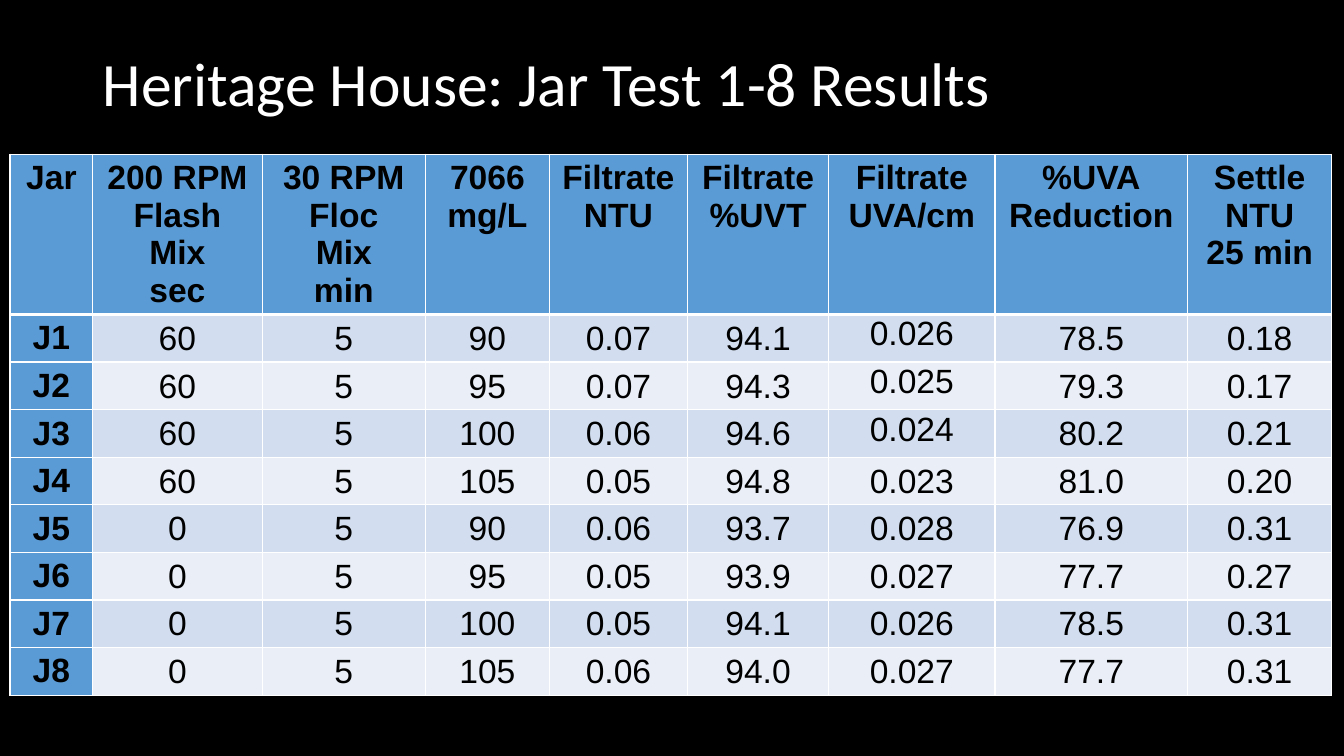
"""Build the jar test results slide."""
from lxml import etree
from pptx import Presentation, util as u
from pptx.dml.color import RGBColor
from pptx.enum import text
from pptx.oxml.ns import qn

TITLE = "Heritage House: Jar Test 1-8 Results"
COLUMNS = [
    ("Jar", 0.82), ("200 RPM\nFlash\nMix\nsec", 1.68),
    ("30 RPM\nFloc\nMix\nmin", 1.62), ("7066\nmg/L", 1.23),
    ("Filtrate\nNTU", 1.37), ("Filtrate\n%UVT", 1.4),
    ("Filtrate\nUVA/cm", 1.65), ("%UVA\nReduction", 1.91),
    ("Settle\nNTU\n25 min", 1.43),
]
JARS = [
    ("J1", "60", "5", "90", "0.07", "94.1", "0.026", "78.5", "0.18"),
    ("J2", "60", "5", "95", "0.07", "94.3", "0.025", "79.3", "0.17"),
    ("J3", "60", "5", "100", "0.06", "94.6", "0.024", "80.2", "0.21"),
    ("J4", "60", "5", "105", "0.05", "94.8", "0.023", "81.0", "0.20"),
    ("J5", "0", "5", "90", "0.06", "93.7", "0.028", "76.9", "0.31"),
    ("J6", "0", "5", "95", "0.05", "93.9", "0.027", "77.7", "0.27"),
    ("J7", "0", "5", "100", "0.05", "94.1", "0.026", "78.5", "0.31"),
    ("J8", "0", "5", "105", "0.06", "94.0", "0.027", "77.7", "0.31"),
]
HEADING_HEIGHT, JAR_HEIGHT = 1.59, 0.47
UVA_COLUMN, TOP_UVA_ROWS = 6, (1, 2, 3)
BLACK, WHITE, BLUE = "000000", "FFFFFF", "5B9BD5"
BANDS = ("EAEFF7", "D2DEEF")


def color(value):
    return RGBColor.from_string(value)


def style_text(frame, font_name, size, hue, bold, align):
    for paragraph in frame.paragraphs:
        paragraph.alignment = align
        for run in paragraph.runs:
            run.font.name = font_name
            run.font.size = u.Pt(size)
            run.font.color.rgb = color(hue)
            run.font.bold = bold


def draw_borders(cell, widths):
    properties = cell._tc.get_or_add_tcPr()
    for side, width in widths.items():
        line = etree.SubElement(properties, qn(f"a:ln{side}"), w=str(u.Pt(width)))
        fill = etree.SubElement(line, qn("a:solidFill"))
        etree.SubElement(fill, qn("a:srgbClr"), val=WHITE)


def fill_cell(cell, row, column, wording):
    heading = row == 0 or column == 0
    draw_borders(cell, {"L": 1, "R": 1, "T": 3 if row == 1 else 1,
                        "B": 3 if row == 0 else 1})
    cell.fill.solid()
    cell.fill.fore_color.rgb = color(BLUE if heading else BANDS[row % 2])
    cell.text_frame.text = wording
    style_text(cell.text_frame, "Arial", 24, BLACK, heading, text.PP_ALIGN.CENTER)
    raised = column == UVA_COLUMN and row in TOP_UVA_ROWS
    cell.vertical_anchor = (text.MSO_ANCHOR.TOP if heading or raised
                            else text.MSO_ANCHOR.MIDDLE)
    if not heading:
        cell.margin_left = cell.margin_right = cell.margin_top = u.Inches(0.01)
        cell.margin_bottom = 0


def add_title(slide):
    title = slide.shapes.title
    title.left, title.top, title.width, title.height = map(
        u.Inches, (0.92, 0.13, 11.5, 1.45))
    frame = title.text_frame
    frame.text = TITLE
    frame.auto_size = text.MSO_AUTO_SIZE.NONE
    frame.vertical_anchor = text.MSO_ANCHOR.MIDDLE
    frame.paragraphs[0].line_spacing = 0.9
    style_text(frame, "Calibri", 44, WHITE, False, text.PP_ALIGN.LEFT)


def add_results(slide):
    headings, widths = zip(*COLUMNS)
    rows = [headings, *JARS]
    heights = [HEADING_HEIGHT] + [JAR_HEIGHT] * len(JARS)
    results = slide.shapes.add_table(
        len(rows), len(widths), u.Inches(0.1), u.Inches(1.53),
        u.Inches(sum(widths)), u.Inches(sum(heights))).table
    for column, width in zip(results.columns, widths):
        column.width = u.Inches(width)
    for row, height in zip(results.rows, heights):
        row.height = u.Inches(height)
    for r, values in enumerate(rows):
        for c, wording in enumerate(values):
            fill_cell(results.cell(r, c), r, c, wording)


def main():
    deck = Presentation()
    deck.slide_width, deck.slide_height = u.Inches(13.33), u.Inches(7.5)
    slide = deck.slides.add_slide(deck.slide_layouts[5])
    slide.background.fill.solid()
    slide.background.fill.fore_color.rgb = color(BLACK)
    add_title(slide)
    add_results(slide)
    deck.save("out.pptx")


if __name__ == "__main__":
    main()
